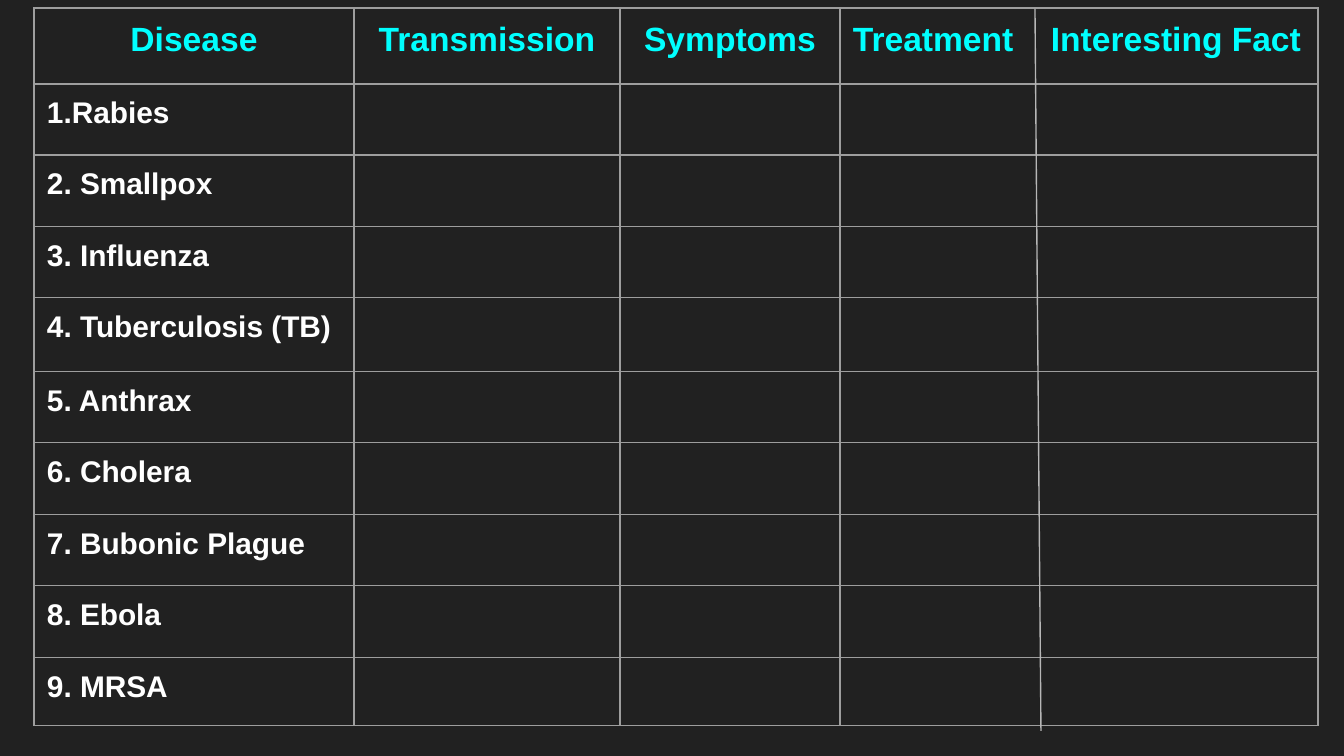
from lxml import etree
from pptx import Presentation
from pptx.dml.color import RGBColor
from pptx.enum.shapes import MSO_CONNECTOR
from pptx.enum.text import PP_ALIGN
from pptx.oxml.ns import qn
from pptx.util import Emu, Pt

LEFT, CENTER = PP_ALIGN.LEFT, PP_ALIGN.CENTER
STRAIGHT = MSO_CONNECTOR.STRAIGHT

BACKGROUND = RGBColor(0x21, 0x21, 0x21)
CYAN = RGBColor(0x00, 0xFF, 0xFF)
WHITE = RGBColor(0xFF, 0xFF, 0xFF)
GRID_GRAY = RGBColor(0x9E, 0x9E, 0x9E)
DIVIDER_GRAY = RGBColor(0xB7, 0xB7, 0xB7)

PX = 914400 / 134.4  # EMU per pixel
CELL_MARGIN = 13
FACT_TAB = 198
COLUMN_WIDTHS = [320, 266, 220, 478]
ROW_HEIGHTS = [76, 71, 72, 71, 74, 71, 72, 71, 72, 68]
HEADINGS = ["Disease", "Transmission", "Symptoms", "Treatment\tInteresting Fact"]
DISEASES = ["1.Rabies", "2. Smallpox", "3. Influenza", "4. Tuberculosis (TB)",
            "5. Anthrax", "6. Cholera", "7. Bubonic Plague", "8. Ebola", "9. MRSA"]


def px(length):
    return Emu(round(length * PX))


def write(cell, text, size=16, color=WHITE, align=LEFT):
    para = cell.text_frame.paragraphs[0]
    para.alignment = align
    span = para.add_run()
    span.text = text
    span.font.name = "Arial"
    span.font.size = Pt(size)
    span.font.bold = True
    span.font.color.rgb = color
    return para


# Page
deck = Presentation()
deck.slide_width, deck.slide_height = px(1344), px(756)
page = deck.slides.add_slide(deck.slide_layouts[6])
page.background.fill.solid()
page.background.fill.fore_color.rgb = BACKGROUND

# Disease table
table = page.shapes.add_table(
    len(ROW_HEIGHTS), len(COLUMN_WIDTHS), px(34), px(8),
    px(sum(COLUMN_WIDTHS)), px(sum(ROW_HEIGHTS))).table
table.first_row = table.horz_banding = False
for column, width in zip(table.columns, COLUMN_WIDTHS):
    column.width = px(width)
for row, height in zip(table.rows, ROW_HEIGHTS):
    row.height = px(height)

# Cell margins, fills and borders
for cell in table.iter_cells():
    cell.margin_left = cell.margin_right = px(CELL_MARGIN)
    cell.margin_top = cell.margin_bottom = px(CELL_MARGIN)
    cell.fill.background()
    properties = cell._tc.get_or_add_tcPr()
    for index, side in enumerate(("a:lnL", "a:lnR", "a:lnT", "a:lnB")):
        border = etree.Element(qn(side), w=str(Pt(0.75)))
        fill = etree.SubElement(border, qn("a:solidFill"))
        etree.SubElement(fill, qn("a:srgbClr"), val=str(GRID_GRAY))
        properties.insert(index, border)

# Headings; the last cell holds two, set apart by a tab stop
for column, heading in enumerate(HEADINGS):
    align = LEFT if "\t" in heading else CENTER
    para = write(table.cell(0, column), heading, size=18, color=CYAN, align=align)
    if "\t" in heading:
        tabs = etree.SubElement(para._p.get_or_add_pPr(), qn("a:tabLst"))
        etree.SubElement(tabs, qn("a:tab"), pos=str(px(FACT_TAB)), algn="l")

# Disease names
for row, disease in enumerate(DISEASES, start=1):
    write(table.cell(row, 0), disease)

# Divider between treatment and interesting fact
divider = page.shapes.add_connector(STRAIGHT, px(1035), px(9), px(1041), px(731))
divider.line.color.rgb = DIVIDER_GRAY
divider.line.width = Pt(0.75)
etree.SubElement(divider._element.spPr, qn("a:effectLst"))

deck.save("out.pptx")
